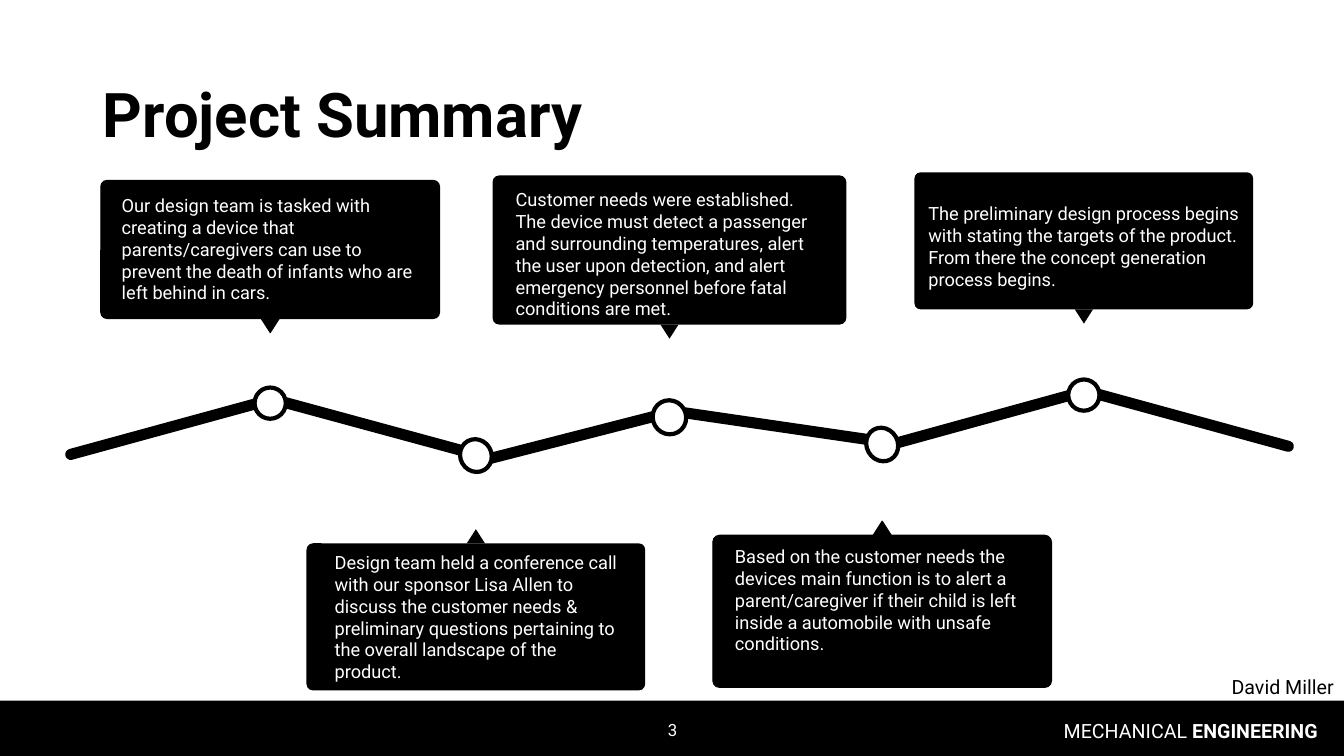
from dataclasses import dataclass

from lxml import etree
from pptx import Presentation
from pptx.dml.color import RGBColor
from pptx.enum import shapes, text
from pptx.oxml import ns
from pptx.util import Inches, Pt

COLORS = {"ink": "000000", "paper": "FFFFFF"}
FONT = "Roboto"
POINTER_WIDTH, POINTER_HEIGHT = 0.18, 0.14
SEGMENT_WIDTH, SEGMENT_HEIGHT = 2.18, 0.11
FIRST_SEGMENT, LAST_SEGMENT = 0.61, 10.69
SEGMENTS = [  # top, rotation
    (4.18, -15.3), (4.18, 15.2), (4.27, -14.4),
    (4.18, 8.3), (4.1, -15.4), (4.1, 15.3),
]


@dataclass
class Milestone:
    """One stop: node, pointer and card share a centre line."""
    center: float
    node_y: float
    node_size: tuple
    card_top: float
    card_size: tuple
    inset: tuple
    outlined: bool
    words: str


MILESTONES = [
    Milestone(2.68, 4.0, (0.31, 0.31), 1.79, (3.36, 1.37), (0.19, 0.12), True,
              "Our design team is tasked with creating a device that "
              "parents/caregivers can use to prevent the death of infants "
              "who are left behind in cars."),
    Milestone(4.72, 4.52, (0.31, 0.33), 5.39, (3.36, 1.46), (0.26, 0.06), False,
              "Design team held a conference call with our sponsor Lisa Allen "
              "to discuss the customer needs & preliminary questions "
              "pertaining to the overall landscape of the product."),
    Milestone(6.64, 4.14, (0.33, 0.34), 1.74, (3.51, 1.48), (0.21, 0.11), False,
              "Customer needs were established. The device must detect a "
              "passenger and surrounding temperatures, alert the user upon "
              "detection, and alert emergency personnel before fatal "
              "conditions are met."),
    Milestone(8.75, 4.41, (0.31, 0.34), 5.31, (3.36, 1.51), (0.2, 0.08), True,
              "Based on the customer needs the devices main function is to "
              "alert a parent/caregiver if their child is left inside a "
              "automobile with unsafe conditions."),
    Milestone(10.75, 3.92, (0.31, 0.31), 1.71, (3.36, 1.36), (0.12, 0.28), False,
              "The preliminary design process begins with stating the targets "
              "of the product. From there the concept generation process "
              "begins."),
]


def color(name):
    return RGBColor.from_string(COLORS[name])


def place(shape, left, top, width, height):
    shape.left, shape.top = Inches(left), Inches(top)
    shape.width, shape.height = Inches(width), Inches(height)


def add_block(slide, preset, box, fill="ink", line_width=0, rotation=0, corner=None):
    """Add a plain preset shape; box is left, top, width, height in inches."""
    shape = slide.shapes.add_shape(preset, *map(Inches, box))
    shape.shadow.inherit = False
    shape.fill.solid()
    shape.fill.fore_color.rgb = color(fill)
    if line_width:
        shape.line.color.rgb = color("ink")
        shape.line.width = Pt(line_width)
    else:
        shape.line.fill.background()
    shape.rotation = rotation
    if corner is not None:
        shape.adjustments[0] = corner
    return shape


def write(shape, runs, size, ink="paper", align=text.PP_ALIGN.LEFT,
          anchor=text.MSO_ANCHOR.TOP, inset=(0.1, 0.05), spacing=1.0):
    """Fill the shape with one paragraph of (words, bold) runs."""
    frame = shape.text_frame
    frame.word_wrap = True
    frame.auto_size = text.MSO_AUTO_SIZE.NONE
    frame.vertical_anchor = anchor
    frame.margin_left = frame.margin_right = Inches(inset[0])
    frame.margin_top, frame.margin_bottom = Inches(inset[1]), Inches(0.05)
    paragraph = frame.paragraphs[0]
    paragraph.alignment = align
    paragraph.line_spacing = spacing
    paragraph.space_before = Pt(0)
    for words, bold in runs:
        run = paragraph.add_run()
        run.text = words
        run.font.name, run.font.size, run.font.bold = FONT, Pt(size), bold
        run.font.color.rgb = color(ink)
    return paragraph


def remove_bullet(paragraph):
    properties = paragraph._p.get_or_add_pPr()
    properties.set("marL", "0")
    properties.set("indent", "0")
    etree.SubElement(properties, ns.qn("a:buNone"))


def add_label(slide, box, runs, size, **style):
    write(slide.shapes.add_textbox(*map(Inches, box)), runs, size, **style)


def add_headings(slide):
    title, author = slide.placeholders[0], slide.placeholders[1]
    place(title, 0.92, 0.44, 11.5, 1.45)
    write(title, [("Project Summary", True)], 44, "ink",
          anchor=text.MSO_ANCHOR.MIDDLE, spacing=0.9)
    place(author, 9.83, 6.67, 3.5, 0.25)
    remove_bullet(write(author, [("David Miller", False)], 14, "ink",
                        text.PP_ALIGN.RIGHT, spacing=0.9))


def add_footer(slide):
    add_block(slide, shapes.MSO_SHAPE.RECTANGLE, (0, 6.95, 13.33, 0.55))
    add_label(slide, (10.17, 7.08, 3, 0.4),
              [("MECHANICAL ", False), ("ENGINEERING", True)], 14,
              align=text.PP_ALIGN.RIGHT)
    add_label(slide, (5.17, 7.04, 3, 0.4), [("3", False)], 12,
              align=text.PP_ALIGN.CENTER, anchor=text.MSO_ANCHOR.MIDDLE)


def add_timeline(slide):
    step = (LAST_SEGMENT - FIRST_SEGMENT) / (len(SEGMENTS) - 1)
    for index, (top, rotation) in enumerate(SEGMENTS):
        box = (FIRST_SEGMENT + index * step, top, SEGMENT_WIDTH, SEGMENT_HEIGHT)
        add_block(slide, shapes.MSO_SHAPE.ROUNDED_RECTANGLE, box,
                  rotation=rotation, corner=0.5)


def add_milestone(slide, stop):
    outline = 0.75 if stop.outlined else 0
    width, height = stop.node_size
    add_block(slide, shapes.MSO_SHAPE.OVAL,
              (stop.center - width / 2, stop.node_y - height / 2, width, height),
              "paper", 3, rotation=-29.8)

    width, height = stop.card_size
    card = add_block(slide, shapes.MSO_SHAPE.ROUNDED_RECTANGLE,
                     (stop.center - width / 2, stop.card_top, width, height),
                     line_width=outline, corner=0.045)
    write(card, [(stop.words, False)], 13, inset=stop.inset)

    above = stop.card_top < stop.node_y
    pointer_top = stop.card_top + height if above else stop.card_top - POINTER_HEIGHT
    add_block(slide, shapes.MSO_SHAPE.ISOSCELES_TRIANGLE,
              (stop.center - POINTER_WIDTH / 2, pointer_top,
               POINTER_WIDTH, POINTER_HEIGHT),
              line_width=outline, rotation=180 if above else 0)


def main():
    presentation = Presentation()
    presentation.slide_width = Inches(13.33)
    presentation.slide_height = Inches(7.5)
    slide = presentation.slides.add_slide(presentation.slide_layouts[1])
    add_footer(slide)
    add_headings(slide)
    add_timeline(slide)
    for stop in MILESTONES:
        add_milestone(slide, stop)
    presentation.save("out.pptx")


if __name__ == "__main__":
    main()
